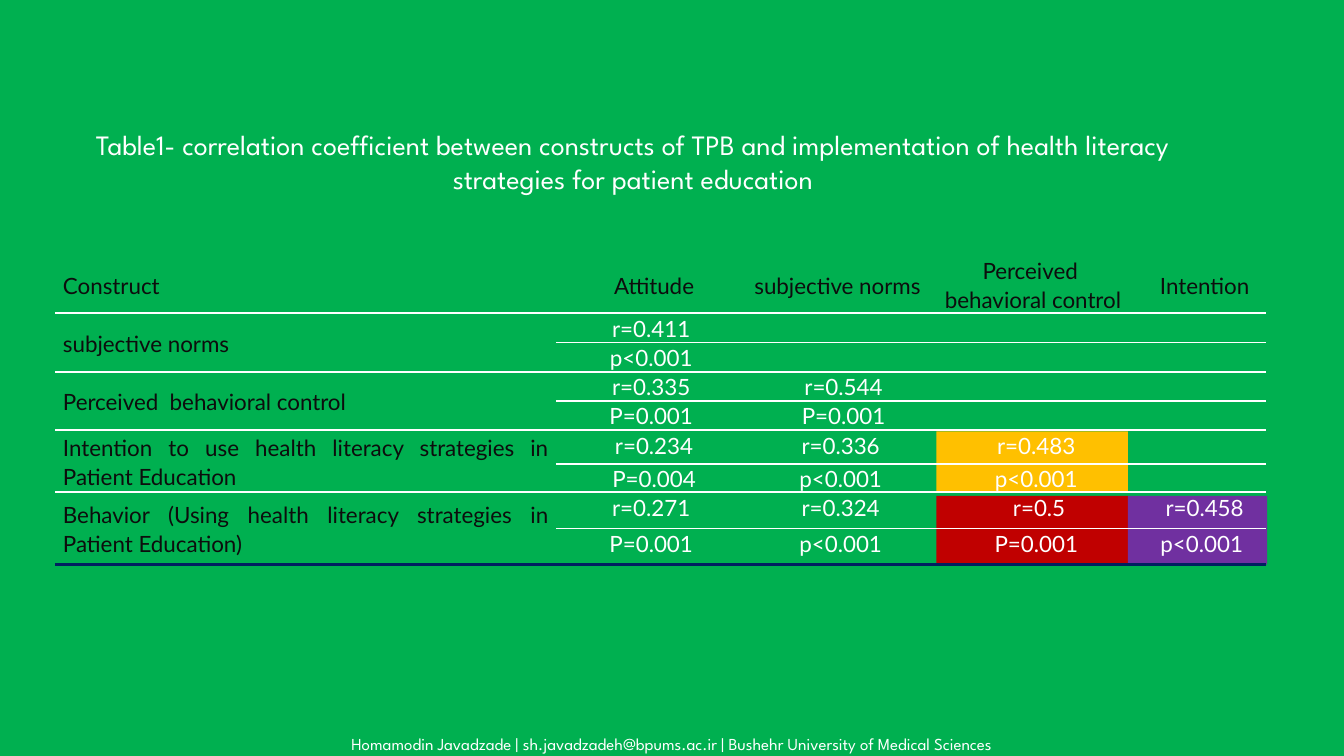
from dataclasses import dataclass

from lxml import etree
from pptx import Presentation, util as u
from pptx.dml.color import RGBColor
from pptx.enum import shapes, text
from pptx.oxml import ns

WHITE, INK, NAVY = "FFFFFF", "0D0D0D", "002060"
HEAD, BODY = "League Spartan", "Lato"
ALIGN = text.PP_ALIGN


@dataclass
class Box:
    left: float
    top: float
    width: float
    height: float

    def place(self) -> tuple:
        return tuple(u.Pt(n) for n in (self.left, self.top, self.width, self.height))


@dataclass
class Panel:
    box: Box
    color: str


@dataclass
class Label:
    box: Box
    words: str
    size: float


@dataclass
class Pair:
    """A construct with its r row and its p row."""
    name: str
    r: list[str]
    p: list[str]


PANELS = [
    Panel(Box(668.9, 308.2, 136.8, 42.5), "FFC000"),
    Panel(Box(668.9, 354.2, 136.8, 49), "C00000"),
    Panel(Box(805.7, 354.2, 99.4, 49), "7030A0"),
]
LABELS = [
    Label(Box(52.6, 87.8, 799.2, 55.4),
          "Table1- correlation coefficient between constructs of TPB and "
          "implementation of health literacy strategies for patient education", 20),
    Label(Box(0, 520.6, 960, 21.6),
          "Homamodin Javadzade | sh.javadzadeh@bpums.ac.ir | "
          "Bushehr University of Medical Sciences", 12),
]
CONTROL = "Perceived  behavioral control"
TITLES = ["Construct", "Attitude", "subjective norms", CONTROL, "Intention"]
PAIRS = [
    Pair("subjective norms", ["r=0.411 "], ["p<0.001 "]),
    Pair(CONTROL, ["r=0.335 ", "r=0.544"], ["P=0.001 ", "P=0.001"]),
    Pair("Intention to use health literacy strategies in Patient Education",
         ["r=0.234", "r=0.336 ", "r=0.483 "], ["P=0.004", "p<0.001 ", "p<0.001 "]),
    Pair("Behavior (Using health literacy strategies in Patient Education)",
         ["r=0.271 ", "r=0.324 ", "r=0.5", "r=0.458"],
         ["P=0.001 ", "p<0.001 ", "P=0.001 ", "p<0.001 "]),
]
TABLE = Box(39.6, 182.9, 865.4, 221)
COLS = [357.8, 131, 139.7, 139.7, 96.8]
ROWS = [39.6, 20.9, 20.9, 20.9, 20.9, 23.8, 19.4, 25.9, 25.9]


def paint(target, color: str) -> None:
    """Give a fill or a font one solid colour."""
    if hasattr(target, "solid"):
        target.solid()
        target.fore_color.rgb = RGBColor.from_string(color)
    else:
        target.color.rgb = RGBColor.from_string(color)


def style(para, face: str, size: float, color: str) -> None:
    for run in para.runs:
        run.font.name, run.font.size = face, u.Pt(size)
        paint(run.font, color)


def add_panel(slide, panel: Panel) -> None:
    shape = slide.shapes.add_shape(shapes.MSO_SHAPE.RECTANGLE, *panel.box.place())
    shape.shadow.inherit = False
    shape.line.fill.background()
    paint(shape.fill, panel.color)


def add_label(slide, label: Label) -> None:
    frame = slide.shapes.add_textbox(*label.box.place()).text_frame
    frame.word_wrap = True
    frame.text = label.words
    para = frame.paragraphs[0]
    para.alignment = ALIGN.CENTER
    style(para, HEAD, label.size, WHITE)


def edge(cell, side: str, color: str = "", width: float = 0) -> None:
    """Draw one border of a cell, or clear it when no colour is given."""
    line = etree.SubElement(cell._tc.get_or_add_tcPr(), ns.qn(f"a:ln{side}"),
                            w=str(int(u.Pt(width))))
    if color:
        fill = etree.SubElement(line, ns.qn("a:solidFill"))
        etree.SubElement(fill, ns.qn("a:srgbClr"), val=color)
    else:
        etree.SubElement(line, ns.qn("a:noFill"))


def fill_cell(cell, words: str, row: int, col: int) -> None:
    # Borders and background
    last = row == len(ROWS) - 1 or (col == 0 and row == len(ROWS) - 2)
    edge(cell, "L")
    edge(cell, "R")
    edge(cell, "T", *((WHITE, 1.5) if row else ()))
    edge(cell, "B", *((NAVY, 2.25) if last else (WHITE, 1.5)))
    cell.fill.background()
    # Margins and text
    cell.margin_left = cell.margin_right = u.Pt(5.4)
    cell.margin_top = cell.margin_bottom = 0
    title = row == 0 or col == 0
    if title:
        cell.vertical_anchor = text.MSO_ANCHOR.MIDDLE
    cell.text_frame.text = words
    para = cell.text_frame.paragraphs[0]
    if not words:
        etree.SubElement(para._p, ns.qn("a:endParaRPr"), sz="1200")
        return
    para.alignment = ALIGN.CENTER if col else ALIGN.JUSTIFY
    para.line_spacing, para.space_after = 1.07, u.Pt(8)
    if col and (row or words in ("Attitude", "Intention")):
        para._p.get_or_add_pPr().set("indent", str(int(u.Pt(8.64))))
    style(para, BODY, 16, INK if title else WHITE)


def add_grid(slide) -> None:
    grid = slide.shapes.add_table(len(ROWS), len(COLS), *TABLE.place()).table
    grid.first_row = grid.horz_banding = False
    for col, width in zip(grid.columns, COLS):
        col.width = u.Pt(width)
    for row, height in zip(grid.rows, ROWS):
        row.height = u.Pt(height)
    lines = [TITLES]
    for pair in PAIRS:
        lines += [[pair.name, *pair.r], ["", *pair.p]]
    for i, line in enumerate(lines):
        for j in range(len(COLS)):
            fill_cell(grid.cell(i, j), line[j] if j < len(line) else "", i, j)
    for i in range(1, len(ROWS), 2):
        grid.cell(i, 0).merge(grid.cell(i + 1, 0))


def main() -> None:
    deck = Presentation()
    deck.slide_width, deck.slide_height = u.Pt(960), u.Pt(540)
    slide = deck.slides.add_slide(deck.slide_layouts[6])
    paint(slide.background.fill, "00B050")
    # Colour panels lie behind the clear table cells
    for panel in PANELS:
        add_panel(slide, panel)
    add_grid(slide)
    for label in LABELS:
        add_label(slide, label)
    deck.save("out.pptx")


if __name__ == "__main__":
    main()
